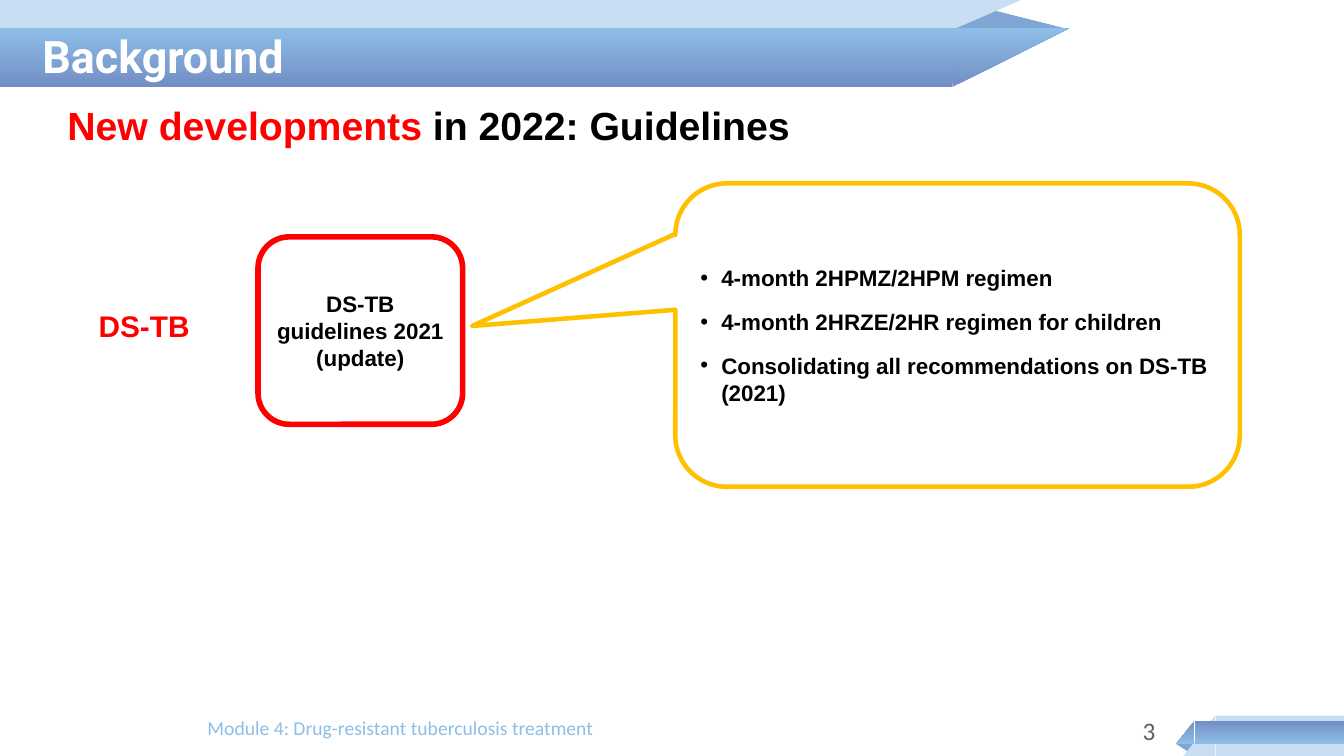
from dataclasses import dataclass
from typing import Any

from lxml import etree
from pptx import Presentation
from pptx.dml.color import RGBColor
from pptx.enum.shapes import MSO_SHAPE
from pptx.enum.text import MSO_ANCHOR, MSO_AUTO_SIZE, PP_ALIGN
from pptx.oxml.ns import qn
from pptx.util import Pt

RECTANGLE = MSO_SHAPE.RECTANGLE
TRIANGLE = MSO_SHAPE.ISOSCELES_TRIANGLE
RIGHT_TRIANGLE = MSO_SHAPE.RIGHT_TRIANGLE
ROUNDED = MSO_SHAPE.ROUNDED_RECTANGLE
CALLOUT = MSO_SHAPE.ROUNDED_RECTANGULAR_CALLOUT
LEFT, CENTER, RIGHT = PP_ALIGN.LEFT, PP_ALIGN.CENTER, PP_ALIGN.RIGHT
TOP, MIDDLE = MSO_ANCHOR.TOP, MSO_ANCHOR.MIDDLE
NO_AUTOFIT = MSO_AUTO_SIZE.NONE

WHITE = RGBColor(0xFF, 0xFF, 0xFF)
BLACK = RGBColor(0x00, 0x00, 0x00)
RED = RGBColor(0xFF, 0x00, 0x00)
AMBER = RGBColor(0xFF, 0xC0, 0x00)
GRAY = RGBColor(0x60, 0x60, 0x60)
PALE_BLUE = RGBColor(0xC9, 0xDD, 0xF3)
MID_BLUE = RGBColor(0x80, 0xA6, 0xD5)
LIGHT_BLUE = RGBColor(0x8D, 0xBE, 0xE6)
DARK_BLUE = RGBColor(0x73, 0x8E, 0xC5)

Box = tuple[float, float, float, float]
Run = tuple[str, RGBColor]


@dataclass(frozen=True)
class RibbonPart:
    kind: Any
    box: Box
    color: RGBColor | None = None  # None means the blue gradient
    rotation: int = 180
    flips: tuple[str, ...] = ()


@dataclass(frozen=True)
class TextStyle:
    size: float
    name: str = "Arial"
    bold: bool = True
    align: Any = LEFT
    anchor: Any = TOP


HEADER = ("flipH",)
CORNER = ("flipV",)
RIBBONS = [
    # Header ribbon
    RibbonPart(TRIANGLE, (679, 6.5, 84.2, 14.4), MID_BLUE, 0),
    RibbonPart(RECTANGLE, (0, 0, 586.8, 62), PALE_BLUE, flips=HEADER),
    RibbonPart(RIGHT_TRIANGLE, (586.1, 0, 143.3, 62), PALE_BLUE, flips=HEADER),
    RibbonPart(RECTANGLE, (0, 20.2, 680.4, 41.8), flips=HEADER),
    RibbonPart(RIGHT_TRIANGLE, (680.4, 20.2, 83.5, 41.8), flips=HEADER),
    # Corner ribbon
    RibbonPart(TRIANGLE, (840.2, 531.4, 13, 5.8), MID_BLUE, 0, ("flipH", "flipV")),
    RibbonPart(RECTANGLE, (868.3, 511.2, 91.7, 28.8), PALE_BLUE, flips=CORNER),
    RibbonPart(RIGHT_TRIANGLE, (845.3, 511.2, 22.5, 28.8), PALE_BLUE, flips=CORNER),
    RibbonPart(RECTANGLE, (853.2, 514.8, 106.8, 16.6), flips=CORNER),
    RibbonPart(RIGHT_TRIANGLE, (840.2, 514.8, 13, 16.6), flips=CORNER),
]
REGIMENS = [
    "4-month 2HPMZ/2HPM regimen",
    "4-month 2HRZE/2HR regimen for children",
    "Consolidating all recommendations on DS-TB (2021)",
]


def in_points(box: Box) -> list[Pt]:
    return [Pt(length) for length in box]


def place(shape: Any, box: Box) -> None:
    shape.left, shape.top, shape.width, shape.height = in_points(box)


def draw_ribbon(slide: Any, part: RibbonPart) -> None:
    shape = slide.shapes.add_shape(part.kind, *in_points(part.box))
    shape.shadow.inherit = False
    shape.line.fill.background()
    shape.rotation = part.rotation
    for flip in part.flips:
        shape._element.spPr.xfrm.set(flip, "1")
    if part.kind == TRIANGLE:
        shape.adjustments[0] = 0.324
    if part.color is not None:
        shape.fill.solid()
        shape.fill.fore_color.rgb = part.color
        return
    shape.fill.gradient()
    shape.fill.gradient_angle = 270
    for stop, color in zip(shape.fill.gradient_stops, (DARK_BLUE, LIGHT_BLUE)):
        stop.color.rgb = color


def write(shape: Any, paragraphs: list[list[Run]], style: TextStyle,
          bulleted: bool = False) -> None:
    frame = shape.text_frame
    frame_format = {"word_wrap": True, "auto_size": NO_AUTOFIT,
                    "vertical_anchor": style.anchor}
    for attribute, value in frame_format.items():
        setattr(frame, attribute, value)
    for index, runs in enumerate(paragraphs):
        paragraph = frame.paragraphs[0] if index == 0 else frame.add_paragraph()
        properties = paragraph._p.get_or_add_pPr()
        indent = Pt(15) if bulleted else 0
        properties.set("marL", str(indent))
        properties.set("indent", str(-indent))
        if bulleted:
            etree.SubElement(properties, qn("a:buFont"), typeface="Arial")
            etree.SubElement(properties, qn("a:buChar"), char="•")
        else:
            etree.SubElement(properties, qn("a:buNone"))
        paragraph_format = {
            "alignment": style.align,
            "space_before": Pt(6 if index else 0),
            "space_after": Pt(6 if bulleted else 0),
        }
        for attribute, value in paragraph_format.items():
            setattr(paragraph, attribute, value)
        for text, color in runs:
            run = paragraph.add_run()
            run.text = text
            font_format = {"name": style.name, "size": Pt(style.size), "bold": style.bold}
            for attribute, value in font_format.items():
                setattr(run.font, attribute, value)
            run.font.color.rgb = color


def add_label(slide: Any, box: Box, run: Run, style: TextStyle) -> None:
    write(slide.shapes.add_textbox(*in_points(box)), [[run]], style)


def add_outline(slide: Any, kind: Any, box: Box, color: RGBColor, width: float) -> Any:
    shape = slide.shapes.add_shape(kind, *in_points(box))
    shape.shadow.inherit = False
    shape.fill.background()
    shape.line.color.rgb = color
    shape.line.width = Pt(width)
    return shape


def main() -> None:
    presentation = Presentation()
    presentation.slide_width, presentation.slide_height = Pt(960), Pt(540)
    slide = presentation.slides.add_slide(presentation.slide_layouts[1])

    for part in RIBBONS:
        draw_ribbon(slide, part)

    # Footer
    add_label(slide, (729.4, 507.6, 103, 28.8), ("3", GRAY),
              TextStyle(18, "Calibri", False, RIGHT))
    add_label(slide, (141.1, 507.6, 577.4, 28.8),
              ("Module 4: Drug-resistant tuberculosis treatment", LIGHT_BLUE),
              TextStyle(14, "Calibri", False))

    # Title and heading, brought in front of the ribbons
    title, heading = slide.shapes.title, slide.placeholders[1]
    for placeholder in (title, heading):
        slide.shapes._spTree.append(placeholder._element)
    place(title, (23, 7.9, 577.4, 64.1))
    write(title, [[("Background", WHITE)]], TextStyle(32, "Roboto", anchor=MIDDLE))
    place(heading, (41, 68.4, 770.4, 33.1))
    write(heading, [[("New developments ", RED), ("in 2022: Guidelines", BLACK)]],
          TextStyle(28))

    # Guideline and its callout
    add_label(slide, (63.4, 216, 95.8, 33.1), ("DS-TB", RED), TextStyle(21.3))
    guideline = add_outline(slide, ROUNDED, (184.3, 169.2, 146.2, 133.9), RED, 4)
    write(guideline, [[("DS-TB guidelines 2021 (update)", BLACK)]],
          TextStyle(16, align=CENTER, anchor=MIDDLE))
    callout = add_outline(slide, CALLOUT, (482.4, 131, 403.2, 216.7), AMBER, 3.25)
    for index, value in enumerate((-0.86, -0.03, 0.17)):
        callout.adjustments[index] = value
    write(callout, [[(regimen, BLACK)] for regimen in REGIMENS],
          TextStyle(16, anchor=MIDDLE), bulleted=True)

    presentation.save("out.pptx")


if __name__ == "__main__":
    main()
